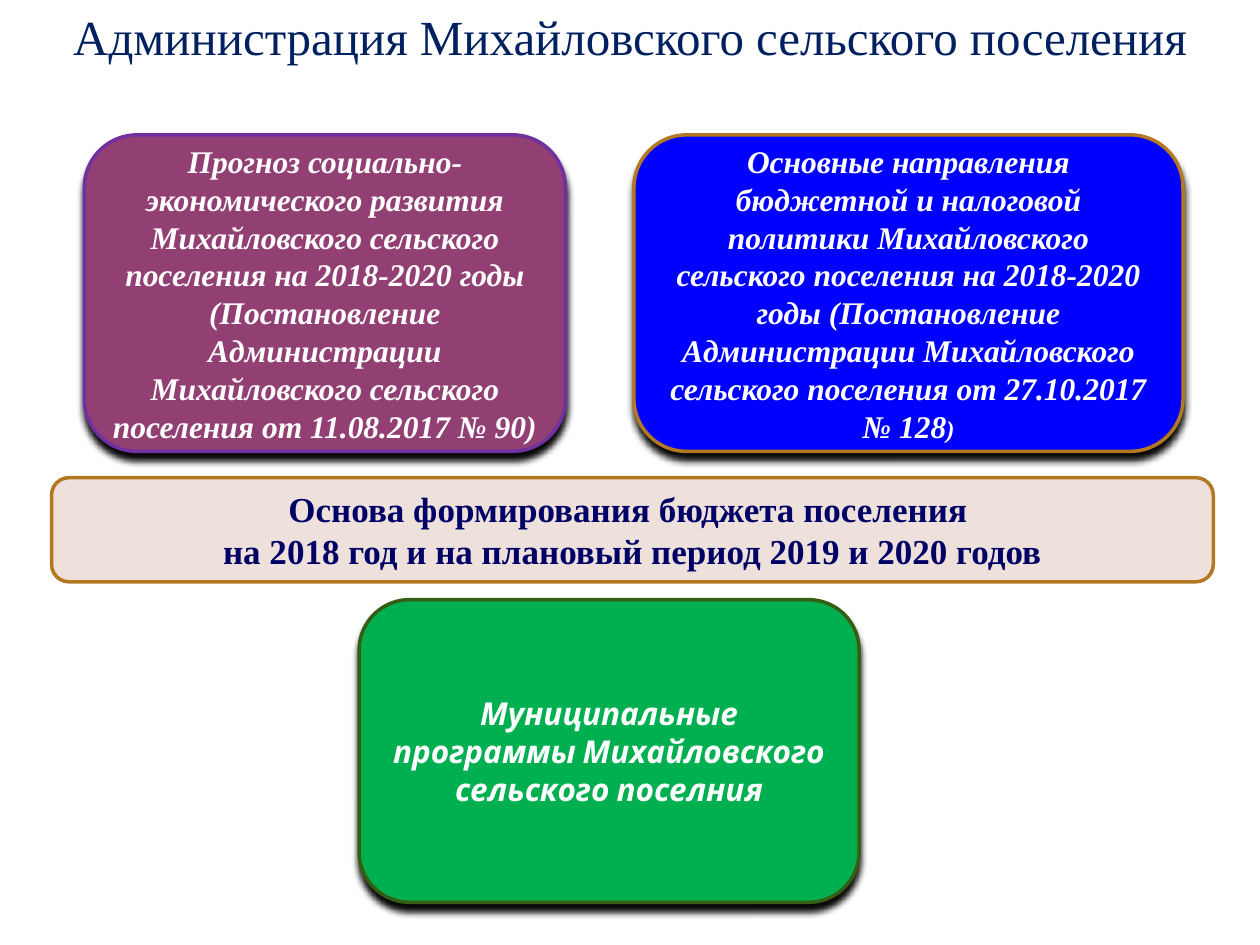
from lxml import etree
from pptx import Presentation
from pptx.dml.color import RGBColor
from pptx.enum import shapes, text
from pptx.oxml import ns
from pptx.util import Cm, Pt

NAVY = RGBColor(0x00, 0x20, 0x60)
INDIGO = RGBColor(0x00, 0x00, 0x66)
WHITE = RGBColor(0xFF, 0xFF, 0xFF)
BEIGE = RGBColor(0xEE, 0xE0, 0xDB)
OCHRE = RGBColor(0xB2, 0x78, 0x22)
GREEN = RGBColor(0x00, 0xB0, 0x50)
DARK_GREEN = RGBColor(0x34, 0x5E, 0x12)
PLUM = RGBColor(0x92, 0x40, 0x73)
PURPLE = RGBColor(0x70, 0x30, 0xA0)
BLUE = RGBColor(0x00, 0x00, 0xFF)
SERIF, SANS = "Times New Roman", "Cabin"

# Content: paragraphs are lists of (text, size) runs; boxes are in cm
TITLE = "Администрация Михайловского сельского поселения"
BASIS = dict(
    box=(1.04, 9.63, 23.42, 2.1), fill=BEIGE, line=OCHRE,
    font=SERIF, color=INDIGO, raised=False,
    paragraphs=[[("Основа формирования бюджета поселения ", 20)],
                [("на 2018 год и на плановый период 2019 и 2020 годов", 20)]])
PROGRAMS = dict(
    box=(7.24, 12.09, 10.08, 6.1), fill=GREEN, line=DARK_GREEN,
    font=SANS, color=WHITE, raised=True,
    paragraphs=[[("Муниципальные программы Михайловского сельского поселния", 18)]])
FORECAST = dict(
    box=(1.7, 2.72, 9.7, 6.38), fill=PLUM, line=PURPLE,
    font=SERIF, color=WHITE, raised=True,
    paragraphs=[[("Прогноз социально-экономического развития Михайловского "
                  "сельского поселения на 2018-2020 годы (Постановление "
                  "Администрации Михайловского сельского поселения "
                  "от 11.08.2017 № 90)", 18)]])
POLICY = dict(
    box=(12.78, 2.72, 11.07, 6.38), fill=BLUE, line=OCHRE,
    font=SERIF, color=WHITE, raised=True,
    paragraphs=[[("Основные направления бюджетной и налоговой политики "
                  "Михайловского сельского поселения на 2018-2020 годы "
                  "(Постановление Администрации Михайловского сельского "
                  "поселения от 27.10.2017 № 128", 18), (")", 14)]])


def add_run(p, words, font, size, color, bold=False, italic=False):
    r = p.add_run()
    r.text = words
    r.font.name, r.font.size = font, Pt(size)
    r.font.bold, r.font.italic = bold, italic
    r.font.color.rgb = color


def add_drop_shadow(sp):
    effects = sp._element.spPr.find(ns.qn("a:effectLst"))
    shadow = etree.SubElement(effects, ns.qn("a:outerShdw"), blurRad=str(Pt(4)),
                              dist=str(Pt(4)), dir="5400000", rotWithShape="0")
    color = etree.SubElement(shadow, ns.qn("a:srgbClr"), val="000000")
    etree.SubElement(color, ns.qn("a:alpha"), val="96000")


def add_card(s, box, fill, line, font, color, raised, paragraphs):
    sp = s.shapes.add_shape(shapes.MSO_SHAPE.ROUNDED_RECTANGLE, *map(Cm, box))
    sp.fill.solid()
    sp.fill.fore_color.rgb = fill
    sp.line.color.rgb = line
    sp.line.width = Pt(2)
    sp.shadow.inherit = False
    if raised:
        add_drop_shadow(sp)
    tf = sp.text_frame
    tf.word_wrap = True
    tf.vertical_anchor = text.MSO_ANCHOR.MIDDLE
    for i, runs in enumerate(paragraphs):
        p = tf.add_paragraph() if i else tf.paragraphs[0]
        p.alignment = text.PP_ALIGN.CENTER
        for words, size in runs:
            add_run(p, words, font, size, color, bold=True, italic=raised)


def main():
    prs = Presentation()
    prs.slide_width, prs.slide_height = Cm(25.4), Cm(19.05)
    s = prs.slides.add_slide(prs.slide_layouts[5])

    # Title
    title = s.shapes.title
    title.left, title.top, title.width, title.height = map(Cm, (0, 0, 25.4, 1.45))
    tf = title.text_frame
    tf.word_wrap = True
    tf.auto_size = text.MSO_AUTO_SIZE.NONE
    tf.vertical_anchor = text.MSO_ANCHOR.TOP
    p = tf.paragraphs[0]
    p.alignment = text.PP_ALIGN.CENTER
    add_run(p, TITLE, SERIF, 28, NAVY)

    # Cards
    for card in (BASIS, PROGRAMS, FORECAST, POLICY):
        add_card(s, **card)

    prs.save("out.pptx")


if __name__ == "__main__":
    main()
